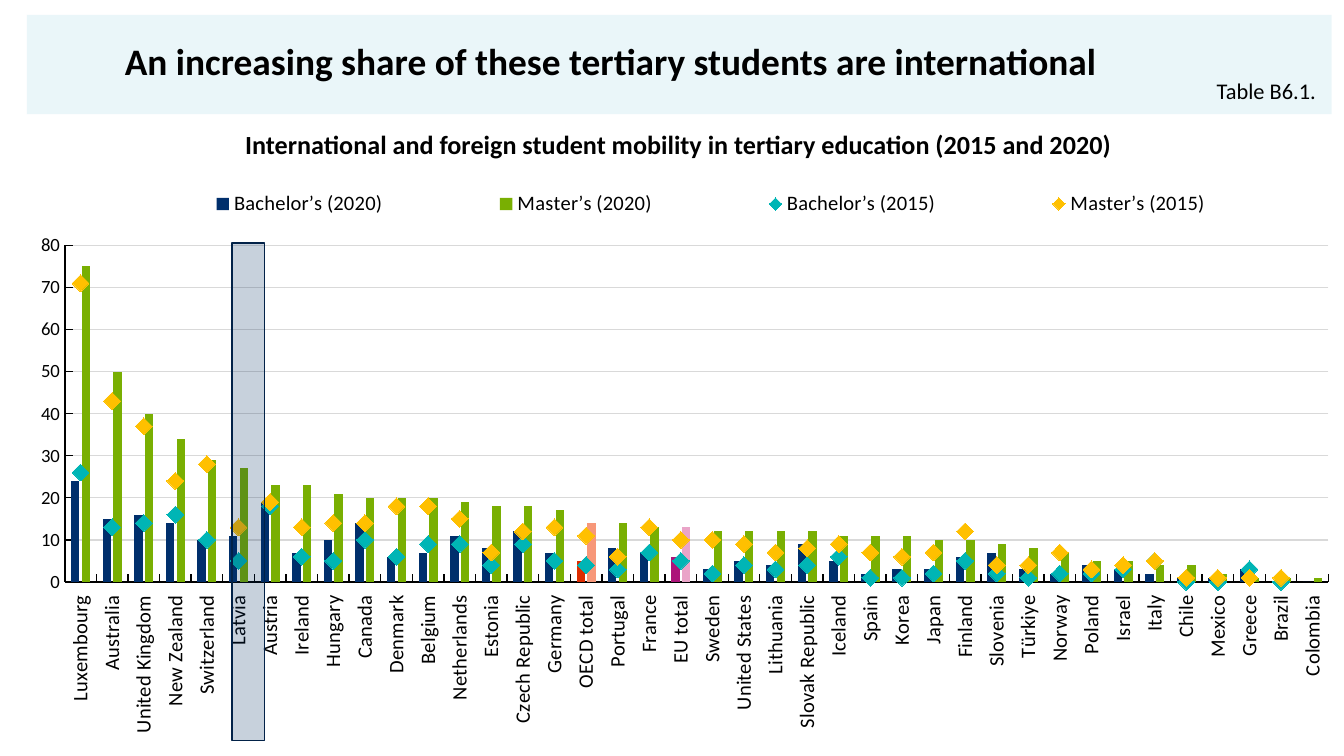
from copy import deepcopy

from lxml.etree import SubElement
from pptx import Presentation
from pptx.chart.data import CategoryChartData
from pptx.dml.color import RGBColor
from pptx.enum.chart import (XL_CHART_TYPE, XL_LEGEND_POSITION, XL_MARKER_STYLE,
                             XL_TICK_LABEL_POSITION, XL_TICK_MARK)
from pptx.enum.shapes import MSO_SHAPE
from pptx.enum.text import MSO_ANCHOR, PP_ALIGN
from pptx.oxml import parse_xml
from pptx.oxml.ns import nsdecls, qn
from pptx.util import Cm, Pt

COLOURS = {
    "text": "000000", "paper": "FFFFFF", "grid": "D9D9D9", "band": "6FC5D5",
    "highlight": "032E61", "highlight_edge": "022248",
    "bachelor": "002F6C", "master": "79AF02",
    "bachelor_2015": "00B5B5", "master_2015": "FFC000",
    "oecd_bachelor": "DD2C00", "oecd_master": "F79779",
    "eu_bachelor": "AC147A", "eu_master": "EAA4C8",
}

MOBILITY = [
    ("Luxembourg", 24, 75, 26, 71), ("Australia", 15, 50, 13, 43),
    ("United Kingdom", 16, 40, 14, 37), ("New Zealand", 14, 34, 16, 24),
    ("Switzerland", 10, 29, 10, 28), ("Latvia", 11, 27, 5, 13),
    ("Austria", 19, 23, 18, 19), ("Ireland", 7, 23, 6, 13),
    ("Hungary", 10, 21, 5, 14), ("Canada", 14, 20, 10, 14),
    ("Denmark", 6, 20, 6, 18), ("Belgium", 7, 20, 9, 18),
    ("Netherlands", 11, 19, 9, 15), ("Estonia", 8, 18, 4, 7),
    ("Czech Republic", 12, 18, 9, 12), ("Germany", 7, 17, 5, 13),
    ("OECD total", 5, 14, 4, 11), ("Portugal", 8, 14, 3, 6),
    ("France", 7, 13, 7, 13), ("EU total", 6, 13, 5, 10),
    ("Sweden", 3, 12, 2, 10), ("United States", 5, 12, 4, 9),
    ("Lithuania", 4, 12, 3, 7), ("Slovak Republic", 9, 12, 4, 8),
    ("Iceland", 5, 11, 6, 9), ("Spain", 2, 11, 1, 7),
    ("Korea", 3, 11, 1, 6), ("Japan", 3, 10, 2, 7),
    ("Finland", 6, 10, 5, 12), ("Slovenia", 7, 9, 2, 4),
    ("Türkiye", 3, 8, 1, 4), ("Norway", 2, 7, 2, 7),
    ("Poland", 4, 5, 2, 3), ("Israel", 3, 5, 3, 4),
    ("Italy", 2, 4, 5, 5), ("Chile", 1, 4, 0, 1),
    ("Mexico", 1, 2, 0, 1), ("Greece", 3, 1, 3, 1),
    ("Brazil", 0, 1, 0, 1), ("Colombia", 0, 1, None, None),
]
LEVELS = ["Bachelor’s (2020)", "Master’s (2020)", "Bachelor’s (2015)", "Master’s (2015)"]
BAR_STYLES = [("bachelor", {"OECD total": "oecd_bachelor", "EU total": "eu_bachelor"}),
              ("master", {"OECD total": "oecd_master", "EU total": "eu_master"})]
MARKER_STYLES = ["bachelor_2015", "master_2015"]


class SlideBuilder:
    """Holds the style and the current slide and draws each kind of element."""

    def __init__(self, slide, font="Calibri"):
        self.slide = slide
        self.font = font

    def apply(self, target, values):
        for name, value in values.items():
            setattr(target, name, value)

    def colour(self, name):
        return RGBColor.from_string(COLOURS[name])

    def style_font(self, font, size, bold=False):
        self.apply(font, {"name": self.font, "size": Pt(size), "bold": bold})
        font.color.rgb = self.colour("text")

    def fill(self, fill, name):
        fill.solid()
        fill.fore_color.rgb = self.colour(name)

    def stroke(self, line, name, width=0.75):
        self.fill(line.fill, name)
        line.width = Pt(width)

    def rectangle(self, box, name, opacity, edge=None):
        panel = self.slide.shapes.add_shape(MSO_SHAPE.RECTANGLE, *map(Cm, box))
        panel.shadow.inherit = False
        self.fill(panel.fill, name)
        tint = panel._element.spPr.find(qn("a:solidFill"))[0]
        SubElement(tint, qn("a:alpha"), val=str(opacity * 1000))
        if edge:
            self.stroke(panel.line, edge, 1)
        else:
            panel.line.fill.background()

    def text(self, box, wording, size, align, bold=False, anchor=MSO_ANCHOR.TOP):
        frame = self.slide.shapes.add_textbox(*map(Cm, box)).text_frame
        self.apply(frame, {"word_wrap": True, "vertical_anchor": anchor})
        paragraph = frame.paragraphs[0]
        self.apply(paragraph, {"text": wording, "alignment": align, "line_spacing": 0.9})
        self.style_font(paragraph.runs[0].font, size, bold)

    def place(self, parent, position, target, x, y, w, h):
        for layout in parent.findall(qn("c:layout")):
            parent.remove(layout)
        parent.insert(position, parse_xml(
            f'<c:layout {nsdecls("c")}><c:manualLayout>{target}'
            '<c:xMode val="edge"/><c:yMode val="edge"/>'
            f'<c:x val="{x}"/><c:y val="{y}"/><c:w val="{w}"/><c:h val="{h}"/>'
            '</c:manualLayout></c:layout>'))

    def split_markers(self, plot_area, bar_count):
        bars = plot_area.find(qn("c:barChart"))
        lines = parse_xml(f'<c:lineChart {nsdecls("c")}><c:grouping val="standard"/>'
                          '<c:varyColors val="0"/></c:lineChart>')
        for series in bars.findall(qn("c:ser"))[bar_count:]:
            for bar_only in series.findall(qn("c:invertIfNegative")):
                series.remove(bar_only)
            lines.append(series)
        SubElement(lines, qn("c:marker"), val="1")
        lines.extend([deepcopy(axis) for axis in bars.findall(qn("c:axId"))])
        bars.addnext(lines)

    def axis(self, axis, size, grid, values):
        self.apply(axis, {"has_major_gridlines": True, "major_tick_mark": XL_TICK_MARK.INSIDE,
                          "minor_tick_mark": XL_TICK_MARK.NONE, **values})
        self.style_font(axis.tick_labels.font, size)
        self.stroke(axis.format.line, "text")
        self.stroke(axis.major_gridlines.format.line, grid)

    def chart(self, box, rows, names, bar_styles, marker_styles):
        countries, *columns = zip(*rows)
        data = CategoryChartData(number_format="#,##0")
        data.categories = countries
        for name, values in zip(names, columns):
            data.add_series(name, values)
        chart = self.slide.shapes.add_chart(
            XL_CHART_TYPE.COLUMN_CLUSTERED, *map(Cm, box), data).chart
        self.apply(chart, {"has_title": False, "has_legend": True})
        self.style_font(chart.font, 10)

        plot_area = chart._chartSpace.chart.plotArea
        self.split_markers(plot_area, len(bar_styles))
        self.place(plot_area, 0, '<c:layoutTarget val="outer"/>', 0.01, 0.1, 0.99, 0.89)
        bars, markers = chart.plots
        self.apply(bars, {"gap_width": 150, "overlap": -27, "vary_by_categories": False})
        for series, (name, totals) in zip(bars.series, bar_styles):
            series.invert_if_negative = False
            self.fill(series.format.fill, name)
            for country, accent in totals.items():
                self.fill(series.points[countries.index(country)].format.fill, accent)
        for series, name in zip(markers.series, marker_styles):
            series.smooth = False
            series.format.line.fill.background()
            self.apply(series.marker, {"style": XL_MARKER_STYLE.DIAMOND, "size": 9})
            self.fill(series.marker.format.fill, name)
            series.marker.format.line.fill.background()

        self.axis(chart.category_axis, 11, "paper",
                  {"tick_label_position": XL_TICK_LABEL_POSITION.LOW})
        chart.category_axis._element.find(qn("c:txPr")).find(qn("a:bodyPr")).set("rot", "-5400000")
        self.axis(chart.value_axis, 10, "grid",
                  {"minimum_scale": 0, "maximum_scale": 80, "major_unit": 10})
        self.apply(chart.value_axis.tick_labels,
                   {"number_format": "#,##0", "number_format_is_linked": False})
        self.apply(chart.legend, {"position": XL_LEGEND_POSITION.TOP, "include_in_layout": True})
        self.style_font(chart.legend.font, 11)
        self.place(chart.legend._element, 1, "", 0.06, 0.01, 0.93, 0.07)


def main():
    deck = Presentation()
    deck.slide_width, deck.slide_height = Cm(25.4), Cm(14.29)
    builder = SlideBuilder(deck.slides.add_slide(deck.slide_layouts[6]))
    builder.rectangle((0.51, 0.28, 24.66, 1.88), "band", 14)
    builder.text((2.11, 0.43, 19.94, 1.55),
                 "An increasing share of these tertiary students are international",
                 20, PP_ALIGN.LEFT, True, MSO_ANCHOR.MIDDLE)
    builder.text((0.53, 2.36, 24.59, 0.79),
                 "International and foreign student mobility in tertiary education (2015 and 2020)",
                 14, PP_ALIGN.CENTER, True)
    builder.text((22.05, 1.4, 3.07, 0.58), "Table B6.1.", 12, PP_ALIGN.RIGHT)
    builder.chart((0.53, 3.38, 24.59, 10.59), MOBILITY, LEVELS, BAR_STYLES, MARKER_STYLES)
    builder.rectangle((4.39, 4.6, 0.61, 9.4), "highlight", 22, "highlight_edge")
    deck.save("out.pptx")


if __name__ == "__main__":
    main()
